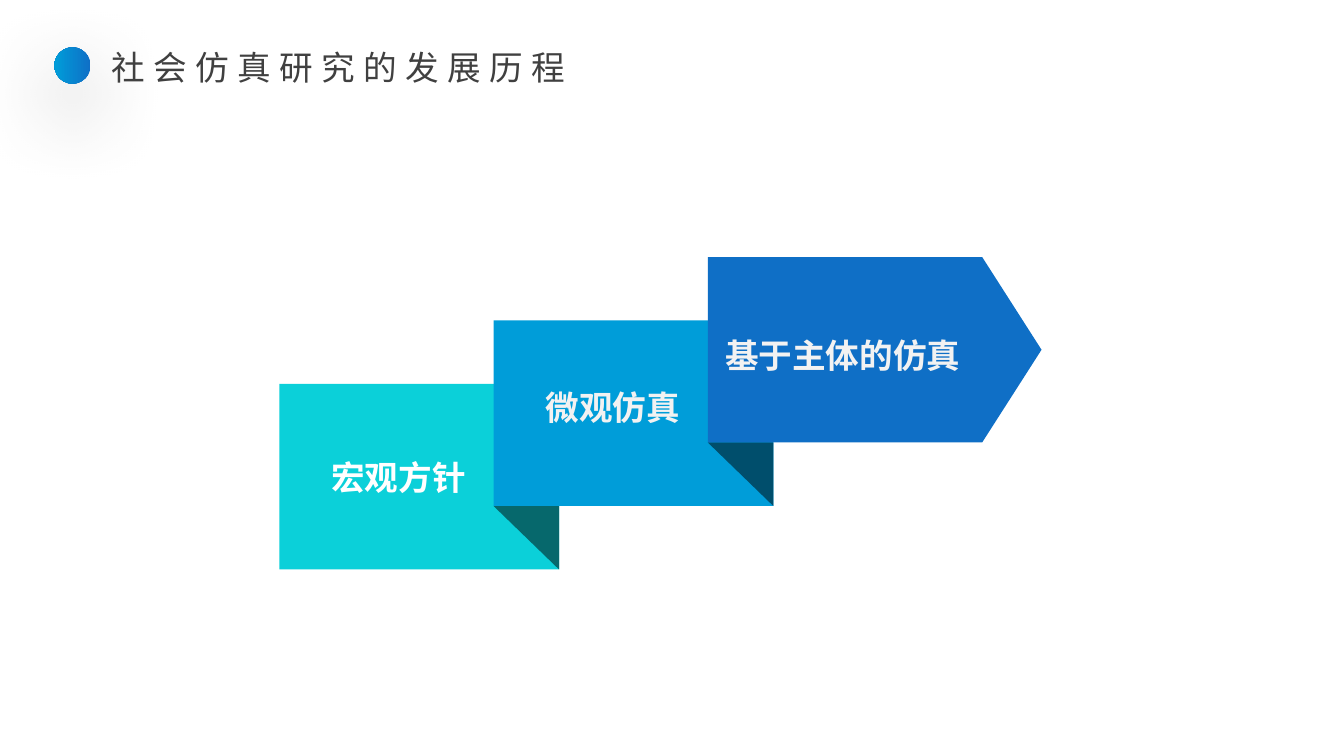
from lxml import etree
from pptx import Presentation
from pptx.dml.color import RGBColor
from pptx.enum.shapes import MSO_SHAPE
from pptx.enum.text import MSO_ANCHOR, PP_ALIGN
from pptx.oxml import parse_xml
from pptx.oxml.ns import qn
from pptx.util import Inches, Pt

OVAL, RECT, ARROW = MSO_SHAPE.OVAL, MSO_SHAPE.RECTANGLE, MSO_SHAPE.PENTAGON
CENTER, RIGHT, JUSTIFY = PP_ALIGN.CENTER, PP_ALIGN.RIGHT, PP_ALIGN.JUSTIFY
MIDDLE = MSO_ANCHOR.MIDDLE
FONT = "Noto Sans CJK SC"
A_NS = "http://schemas.openxmlformats.org/drawingml/2006/main"

# label, shape, fill, fold colour, text colour, alignment, line spacing
STAGES = [
    ("宏观方针", RECT, "0BD0D9", "06686C", "FFFFFF", CENTER, None),
    ("微观仿真", RECT, "009DD9", "004E6C", "F2F2F2", CENTER, Pt(20)),
    ("基于主体的仿真", ARROW, "0F6FC6", None, "F2F2F2", RIGHT, 1.25),
]


def rgb(value):
    return RGBColor.from_string(value)


def paint(sp, color):
    sp.shadow.inherit = False
    sp.fill.solid()
    sp.fill.fore_color.rgb = rgb(color)
    sp.line.fill.background()


def write(tf, text, color, align, bold=False, line_spacing=None, tracking=None):
    p = tf.paragraphs[0]
    p.alignment = align
    if line_spacing:
        p.line_spacing = line_spacing
    r = p.add_run()
    r.text = text
    for name, value in {"name": FONT, "size": Pt(24), "bold": bold}.items():
        setattr(r.font, name, value)
    r.font.color.rgb = rgb(color)
    r_pr = r._r.get_or_add_rPr()
    etree.SubElement(r_pr, qn("a:ea")).set("typeface", FONT)
    if tracking:
        r_pr.set("spc", str(tracking * 100))


def add_title(slide, x, y, w, h, text):
    """Place a gradient dot with a soft shadow, and the title to its right."""
    dot = 0.36
    sp = slide.shapes.add_shape(OVAL, Inches(x), Inches(y + 0.05), Inches(dot), Inches(dot))
    sp.line.fill.background()
    sp.fill.gradient()
    sp.fill.gradient_angle = 180
    for stop, color in zip(sp.fill.gradient_stops, ("0F6FC6", "009DD9")):
        stop.color.rgb = rgb(color)
    sp._element.spPr.append(parse_xml(
        f'<a:effectLst xmlns:a="{A_NS}"><a:outerShdw blurRad="{Pt(60)}" dist="{Pt(20)}" '
        'dir="5400000" algn="t" rotWithShape="0"><a:srgbClr val="000000">'
        '<a:alpha val="40000"/></a:srgbClr></a:outerShdw></a:effectLst>'))

    indent = 0.47
    box = slide.shapes.add_textbox(Inches(x + indent), Inches(y), Inches(w - indent), Inches(h))
    box.text_frame.word_wrap = True
    write(box.text_frame, text, "404040", JUSTIFY, tracking=6)


def add_fold(slide, x, y, w, h, color):
    """Draw the dark triangle under the next stage's lower left corner."""
    outline = slide.shapes.build_freeform(Inches(x), Inches(y))
    outline.add_line_segments([(Inches(x + w), Inches(y)), (Inches(x + w), Inches(y + h))])
    paint(outline.convert_to_shape(), color)


def add_ribbon(slide, x, y, w, h, stages):
    """Climb from the lower left of the box to an arrow at its upper right."""
    stage_h, last_w, fold_w = 1.84, 3.31, 0.65
    steps = len(stages) - 1
    dx, dy = (w - last_w) / steps, (h - stage_h) / steps
    for i, (text, kind, fill, fold, color, align, spacing) in enumerate(stages):
        left, top = x + i * dx, y + (steps - i) * dy
        width = last_w if i == steps else dx + fold_w
        sp = slide.shapes.add_shape(kind, Inches(left), Inches(top), Inches(width), Inches(stage_h))
        paint(sp, fill)
        if kind == ARROW:
            sp.adjustments[0] = 0.32
        tf = sp.text_frame
        layout = {"word_wrap": True, "vertical_anchor": MIDDLE, "margin_right": Inches(0.51)}
        for name, value in layout.items():
            setattr(tf, name, value)
        write(tf, text, color, align, bold=True, line_spacing=spacing)
        if fold:
            add_fold(slide, left + dx, top + stage_h - dy, fold_w, dy, fold)


def main():
    prs = Presentation()
    prs.slide_width, prs.slide_height = Inches(13.33), Inches(7.5)
    slide = prs.slides.add_slide(prs.slide_layouts[6])
    add_title(slide, 0.54, 0.42, 6.46, 0.5, "社会仿真研究的发展历程")
    add_ribbon(slide, 2.77, 2.55, 7.56, 3.1, STAGES)
    prs.save("out.pptx")


if __name__ == "__main__":
    main()
